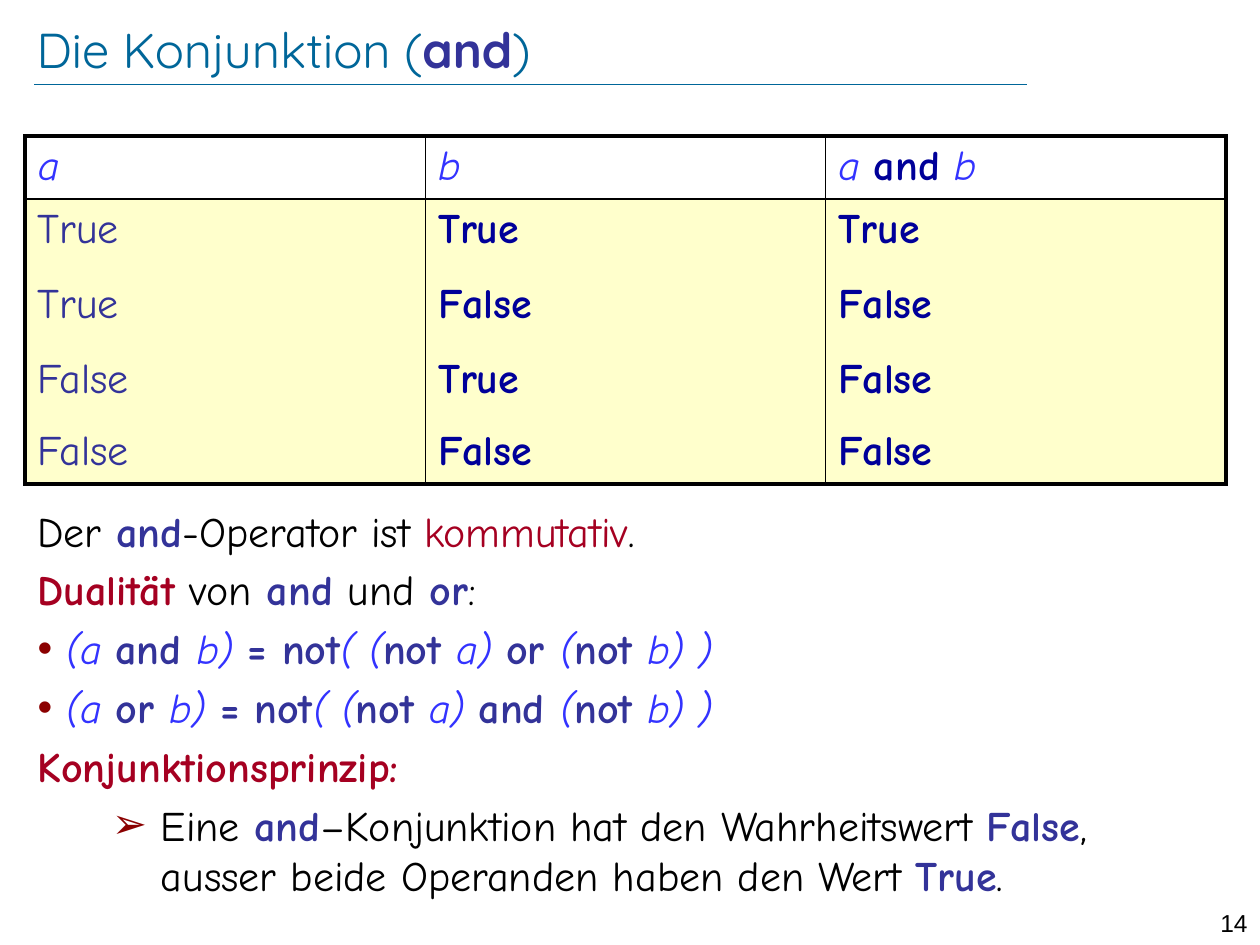
from lxml.etree import SubElement as Sub
from pptx import Presentation
from pptx.dml.color import RGBColor as Rgb
from pptx.enum.shapes import MSO_CONNECTOR as Conn
from pptx.enum.text import MSO_ANCHOR as Anchor, PP_ALIGN as Align
from pptx.oxml.ns import qn
from pptx.util import Pt

HEX = {
    "teal": "006699", "black": "000000", "indigo": "333399", "navy": "000099",
    "blue": "3333FF", "red": "A50021", "mark": "8B0000", "cream": "FFFFCC",
}
LOOK = {
    "title": ("teal", False, False),
    "text": ("black", False, False),
    "key": ("indigo", True, False),
    "var": ("blue", False, True),
    "term": ("red", False, False),
    "head": ("red", True, False),
    "given": ("indigo", False, False),
    "value": ("navy", True, False),
}


def law(one, two):
    return [
        ("(a ", "var"), (one + " ", "key"), ("b) ", "var"), ("= not", "key"),
        ("( (", "var"), ("not ", "key"), ("a) ", "var"), (two + " ", "key"),
        ("(", "var"), ("not ", "key"), ("b) )", "var"),
    ]


TITLE = [("Die Konjunktion (", "title"), ("and", "key"), (")", "title")]
HEAD = [
    [("a", "var")],
    [("b", "var")],
    [("a ", "var"), ("and", "value"), (" b", "var")],
]
TRUTH = [(a, b, a and b) for a in (True, False) for b in (True, False)]
ROWS = [HEAD] + [
    [[(str(val), look)] for val, look in zip(row, ("given", "value", "value"))]
    for row in TRUTH
]
BODY = [
    (None, [("Der", "text"), (" and", "key"), ("-Operator ist ", "text"),
            ("kommutativ", "term"), (".", "text")]),
    (None, [("Dualität ", "head"), ("von", "text"), (" and ", "key"),
            ("und", "text"), (" or", "key"), (":", "text")]),
    ("•", law("and", "or")),
    ("•", law("or", "and")),
    (None, [("Konjunktionsprinzip:", "head")]),
    ("➢", [("Eine ", "text"), ("and", "key"),
           ("–Konjunktion hat den Wahrheitswert ", "text"), ("False", "key"),
           (", ausser beide Operanden haben den Wert ", "text"),
           ("True", "key"), (".", "text")]),
]
INDENT = {"•": (0, 16, 16), "➢": (1, 70.5, 28)}
LEFT, WIDE = 14.4, 686.2
HIGH = [33, 43.2, 42.5, 41, 34.6]


def tint(name):
    return Rgb.from_string(HEX[name])


def write(para, parts, size, face):
    for text, look in parts:
        run = para.add_run()
        run.text = text
        font = run.font
        font.size, font.name = Pt(size), face
        name, font.bold, font.italic = LOOK[look]
        font.color.rgb = tint(name)


def bullet(para, mark):
    level, left, hang = INDENT[mark]
    para.level = level
    props = para._p.get_or_add_pPr()
    props.set("marL", str(Pt(left)))
    props.set("indent", str(-Pt(hang)))
    shade = Sub(props, qn("a:buClr"))
    Sub(shade, qn("a:srgbClr"), val=HEX["mark"])
    Sub(props, qn("a:buFont"), typeface="Arial")
    Sub(props, qn("a:buChar"), char=mark)


def border(cell, side, width):
    line = Sub(cell._tc.get_or_add_tcPr(), qn("a:ln" + side), w=str(Pt(width)))
    if width:
        fill = Sub(line, qn("a:solidFill"))
        Sub(fill, qn("a:srgbClr"), val=HEX["black"])
    else:
        Sub(line, qn("a:noFill"))


def box(slide, left, top, width, height):
    shape = slide.shapes.add_textbox(Pt(left), Pt(top), Pt(width), Pt(height))
    shape.text_frame.word_wrap = True
    return shape.text_frame


def grid(slide):
    rows, cols = len(ROWS), len(HEAD)
    table = slide.shapes.add_table(
        rows, cols, Pt(LEFT), Pt(77.8), Pt(WIDE), Pt(sum(HIGH))).table
    table.first_row = table.horz_banding = False
    for col in table.columns:
        col.width = Pt(WIDE / cols)
    for r, row in enumerate(ROWS):
        table.rows[r].height = Pt(HIGH[r])
        for c, parts in enumerate(row):
            cell = table.cell(r, c)
            write(cell.text_frame.paragraphs[0], parts, 24, "Comic Neue")
            border(cell, "L", 1 if c else 2.25)
            border(cell, "R", 1 if c < cols - 1 else 2.25)
            border(cell, "T", {0: 2.25, 1: 1}.get(r, 0))
            border(cell, "B", {0: 1, rows - 1: 2.25}.get(r, 0))
            if r:
                cell.fill.solid()
                cell.fill.fore_color.rgb = tint("cream")
            else:
                cell.fill.background()


def main():
    deck = Presentation()
    deck.slide_width, deck.slide_height = Pt(720), Pt(540)
    slide = deck.slides.add_slide(deck.slide_layouts[6])

    rule = slide.shapes.add_connector(
        Conn.STRAIGHT, Pt(19.5), Pt(48.2), Pt(586.8), Pt(48.2))
    rule.line.color.rgb = tint("teal")
    rule.line.width = Pt(0.25)
    Sub(rule._element.spPr, qn("a:effectLst"))

    frame = box(slide, 680.4, 515.5, 39.6, 17.3)
    frame.text = "14"
    para = frame.paragraphs[0]
    para.alignment = Align.RIGHT
    font = para.runs[0].font
    font.size, font.name = Pt(14), "Arial"
    font.color.rgb = tint("black")

    frame = box(slide, 20.9, 9.4, 645, 36.7)
    frame.margin_left = frame.margin_right = 0
    frame.margin_top = frame.margin_bottom = 0
    frame.vertical_anchor = Anchor.MIDDLE
    write(frame.paragraphs[0], TITLE, 28, "Quicksand")

    grid(slide)

    frame = box(slide, LEFT, 285.1, WIDE, 195.1)
    for i, (mark, parts) in enumerate(BODY):
        para = frame.add_paragraph() if i else frame.paragraphs[0]
        if i:
            para.space_before = Pt(4.8)
        if mark:
            bullet(para, mark)
        write(para, parts, 24, "Comic Neue")

    deck.save("out.pptx")


if __name__ == "__main__":
    main()
